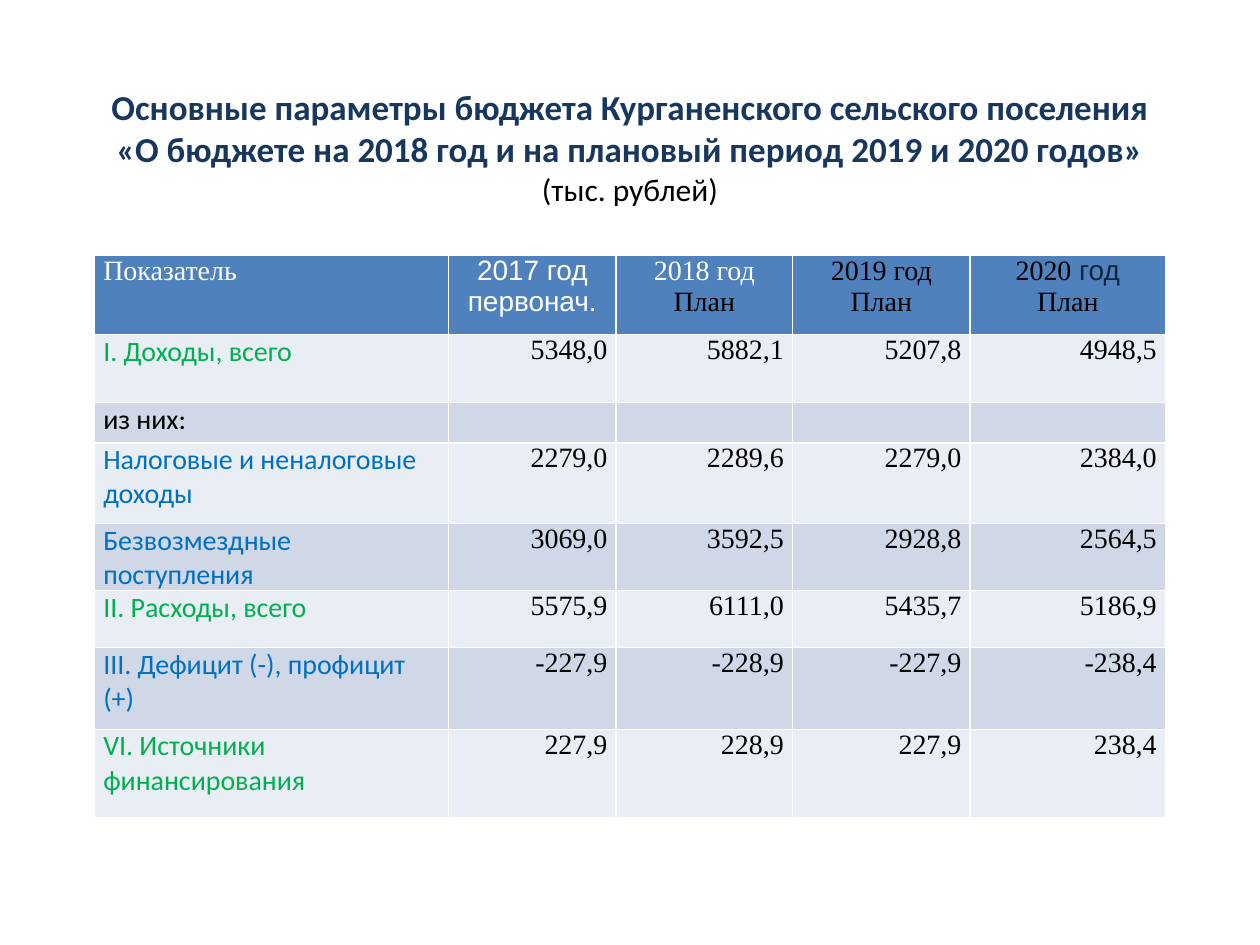
from dataclasses import dataclass

from lxml import etree
from pptx import Presentation
from pptx import util as u
from pptx.dml.color import RGBColor
from pptx.enum import text
from pptx.oxml import ns


@dataclass(frozen=True)
class Theme:
    navy: str = "17375E"
    ink: str = "0F243E"
    black: str = "000000"
    white: str = "FFFFFF"
    green: str = "00B050"
    blue: str = "0070C0"
    header: str = "4F81BD"
    bands: tuple = ("E9EDF4", "D0D8E8")
    sans: str = "Calibri"
    plain: str = "Arial"
    serif: str = "Times New Roman"
    title_size: int = 20
    unit_size: int = 18
    cell_size: int = 16


THEME = Theme()
LEFT, CENTER, RIGHT = (text.PP_ALIGN.LEFT, text.PP_ALIGN.CENTER, text.PP_ALIGN.RIGHT)


def write(paragraph, words, *, font=THEME.sans, size=THEME.cell_size,
          color=THEME.black, bold=False, align=LEFT):
    """Append words to the paragraph; a newline becomes a line break."""
    paragraph.alignment = align
    for index, line in enumerate(words.split("\n")):
        if index:
            paragraph.add_line_break()
        if line:
            run = paragraph.add_run()
            run.text = line
            run.font.name, run.font.size, run.font.bold = font, u.Pt(size), bold
            run.font.color.rgb = RGBColor.from_string(color)


class SlideBuilder:
    def __init__(self, presentation, theme):
        self.theme = theme
        self.width = presentation.slide_width
        self.height = presentation.slide_height
        self.slide = presentation.slides.add_slide(presentation.slide_layouts[6])

    def place(self, left, top, width, height):
        """Turn shares of the slide into lengths."""
        return (u.Emu(round(left * self.width)), u.Emu(round(top * self.height)),
                u.Emu(round(width * self.width)), u.Emu(round(height * self.height)))

    def title(self, heading, unit, area):
        frame = self.slide.shapes.add_textbox(*self.place(*area)).text_frame
        frame.word_wrap = True
        frame.vertical_anchor = text.MSO_ANCHOR.MIDDLE
        paragraph = frame.paragraphs[0]
        write(paragraph, heading + "\n", size=self.theme.title_size,
              color=self.theme.navy, bold=True, align=CENTER)
        write(paragraph, unit, size=self.theme.unit_size, align=CENTER)

    def table(self, area, columns, rows):
        """Add an empty grid; columns and rows hold sizes in inches."""
        frame = self.slide.shapes.add_table(len(rows), len(columns), *self.place(*area))
        table = frame.table
        table.first_row = table.horz_banding = False
        for column, width in zip(table.columns, columns):
            column.width = u.Inches(width)
        for index, (row, height) in enumerate(zip(table.rows, rows)):
            row.height = u.Inches(height)
            fill = self.theme.bands[(index - 1) % 2] if index else self.theme.header
            for cell in row.cells:
                self.style_cell(cell, fill)
        return table

    def style_cell(self, cell, fill):
        cell.margin_left = cell.margin_right = u.Inches(0.07)
        cell.margin_top = cell.margin_bottom = 0
        properties = cell._tc.get_or_add_tcPr()
        for side in ("lnL", "lnR", "lnT", "lnB"):
            line = etree.SubElement(properties, ns.qn(f"a:{side}"), w=str(u.Pt(1)))
            solid = etree.SubElement(line, ns.qn("a:solidFill"))
            etree.SubElement(solid, ns.qn("a:srgbClr"), val=self.theme.white)
        cell.fill.solid()
        cell.fill.fore_color.rgb = RGBColor.from_string(fill)

    def header_cell(self, cell, *lines, align=CENTER):
        """Each line is a list of (words, font, color) runs."""
        frame = cell.text_frame
        for index, runs in enumerate(lines):
            paragraph = frame.add_paragraph() if index else frame.paragraphs[0]
            for words, font, color in runs:
                write(paragraph, words, font=font, color=color, align=align)

    def data_row(self, cells, label, color, values):
        label_cell, *value_cells = cells
        write(label_cell.text_frame.paragraphs[0], label, color=color)
        for cell, value in zip(value_cells, values):
            write(cell.text_frame.paragraphs[0], value, font=self.theme.serif, align=RIGHT)


COLUMNS = [2.81, 1.33, 1.4, 1.41, 1.55]
ROWS = [0.63, 0.54, 0.32, 0.64, 0.47, 0.45, 0.65, 0.7]
BUDGET = [
    ("I. Доходы, всего", THEME.green, "5348,0 5882,1 5207,8 4948,5"),
    ("из них:", THEME.black, ""),
    ("Налоговые и неналоговые доходы", THEME.blue, "2279,0 2289,6 2279,0 2384,0"),
    ("Безвозмездные поступления", THEME.blue, "3069,0 3592,5 2928,8 2564,5"),
    ("II. Расходы, всего", THEME.green, "5575,9 6111,0 5435,7 5186,9"),
    ("III. Дефицит (-), профицит (+)", THEME.blue, "-227,9 -228,9 -227,9 -238,4"),
    ("VI. Источники финансирования", THEME.green, "227,9 228,9 227,9 238,4"),
]


def main():
    presentation = Presentation()
    presentation.slide_width, presentation.slide_height = u.Inches(10), u.Inches(7.5)
    builder = SlideBuilder(presentation, THEME)
    builder.title("Основные параметры бюджета Курганенского сельского поселения\n"
                  "«О бюджете на 2018 год и на плановый период 2019 и 2020 годов»",
                  "(тыс. рублей)", (0.05, 0.06, 0.9, 0.19))

    table = builder.table((0.075, 0.27, 0.85, 0.59), COLUMNS, ROWS)
    indicator, first, second, third, fourth = table.rows[0].cells
    plan = [("План", THEME.serif, THEME.black)]
    builder.header_cell(indicator, [("Показатель", THEME.serif, THEME.white)], align=LEFT)
    builder.header_cell(first, [("2017 год первонач.", THEME.plain, THEME.white)])
    builder.header_cell(second, [("2018 год", THEME.serif, THEME.white)], plan)
    builder.header_cell(third, [("2019 год", THEME.serif, THEME.black)], plan)
    builder.header_cell(fourth, [("2020", THEME.serif, THEME.black),
                                 (" год", THEME.plain, THEME.ink)], plan)
    for index, (label, color, values) in enumerate(BUDGET, start=1):
        builder.data_row(table.rows[index].cells, label, color, values.split())

    presentation.save("out.pptx")


if __name__ == "__main__":
    main()
